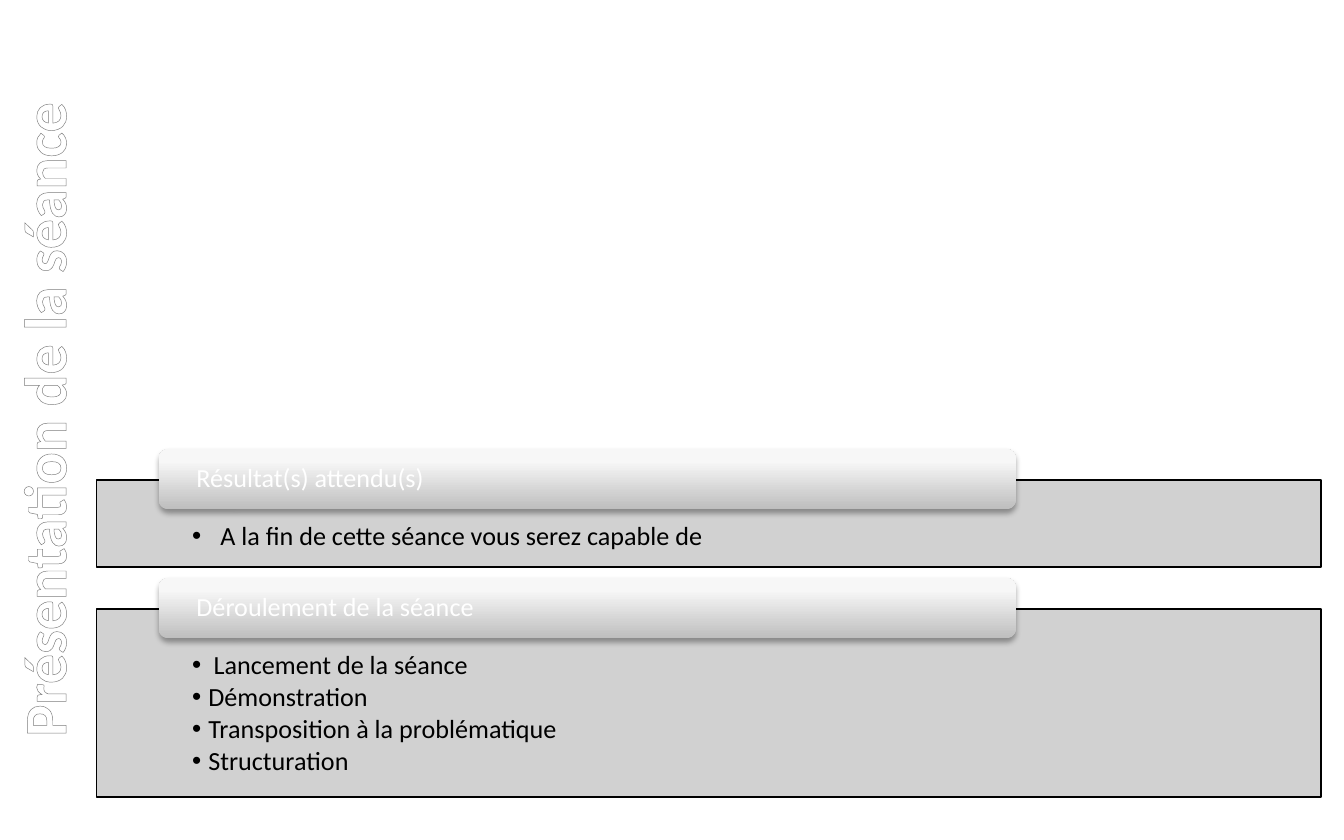
from pptx import Presentation
from pptx.dml.color import RGBColor
from pptx.enum.shapes import MSO_SHAPE as Shape
from pptx.enum.text import MSO_ANCHOR as Anchor, MSO_AUTO_SIZE as AutoSize, PP_ALIGN as Align
from pptx.oxml import parse_xml
from pptx.oxml.ns import nsdecls, qn
from pptx.util import Pt

PX = 9144  # EMU per px, 100 px to the inch
WIDTH, HEIGHT = 1000, 625
TWO_CONTENT = 3
FONT = "Calibri"
HEADER_STOPS = [(0, "BEBEBE"), (80, "F7F7F7"), (100, "F8F8F8")]
TITLE_STOPS = [(0, "FFFFFF"), (9, "FFFFFF"), (50, "7F7F7F"), (79, "FFFFFF"), (100, "FFFFFF")]

# header, panel top, panel height, list of (text, distance from bullet to text)
SECTIONS = [
    ("Résultat(s) attendu(s)", 357, 65,
     [("A la fin de cette séance vous serez capable de", 21)]),
    ("Déroulement de la séance", 453, 140,
     [("Lancement de la séance", 16), ("Démonstration", 12),
      ("Transposition à la problématique", 12), ("Structuration", 12)]),
]


def px(value):
    return value * PX


def color(value):
    return RGBColor.from_string(value)


def element(xml):
    """Parse one DrawingML element written without its namespace declaration."""
    head, rest = xml.split(">", 1)
    slash = "/" if head.endswith("/") else ""
    return parse_xml(f"{head.rstrip('/')} {nsdecls('a')}{slash}>{rest}")


def place(shape, left, top, width, height):
    shape.left, shape.top = px(left), px(top)
    shape.width, shape.height = px(width), px(height)


def set_gradient(parent, fill, stops, angle):
    fill.solid()
    fill.fore_color.rgb = color(stops[0][1])
    marks = "".join(f'<a:gs pos="{position * 1000}"><a:srgbClr val="{value}"/></a:gs>'
                    for position, value in stops)
    gradient = element(f'<a:gradFill rotWithShape="1"><a:gsLst>{marks}</a:gsLst>'
                       f'<a:lin ang="{angle * 60000}" scaled="0"/></a:gradFill>')
    parent.replace(parent.find(qn("a:solidFill")), gradient)


def set_frame(frame, anchor, left, top, right, bottom):
    frame.word_wrap = True
    frame.auto_size = AutoSize.NONE
    frame.vertical_anchor = anchor
    frame.margin_left, frame.margin_top = px(left), px(top)
    frame.margin_right, frame.margin_bottom = px(right), px(bottom)


def add_text(paragraph, text, size, value):
    run = paragraph.add_run()
    run.text = text
    run.font.name, run.font.size = FONT, Pt(size)
    run.font.color.rgb = color(value)
    return run


def build_title(title, left, top, width, height):
    """Fill the upright box with the title, reading from bottom to top."""
    place(title, left + (width - height) // 2, top + (height - width) // 2, height, width)
    title.rotation = 270
    set_frame(title.text_frame, Anchor.MIDDLE, 10, 5, 10, 5)
    paragraph = title.text_frame.paragraphs[0]
    paragraph.alignment = Align.CENTER
    run = add_text(paragraph, "Présentation de la séance", 32, "FFFFFF")
    run.font.bold = True
    properties = run.font._element if hasattr(run.font, "_element") else run._r.get_or_add_rPr()
    set_gradient(properties, run.font.fill, TITLE_STOPS, 90)
    properties.insert(0, element(
        f'<a:ln w="{Pt(0.83)}"><a:solidFill><a:srgbClr val="7D7D7D"/></a:solidFill></a:ln>'))


def build_panel(panel, items, left, top, width, height):
    place(panel, left, top, width, height)
    panel.fill.solid()
    panel.fill.fore_color.rgb = color("CCCCCC")
    panel._element.spPr.find(qn("a:solidFill"))[0].append(element('<a:alpha val="90000"/>'))
    panel.line.color.rgb = color("000000")
    panel.line.width = Pt(0.75)
    frame = panel.text_frame
    set_frame(frame, Anchor.TOP, 71, 32, 71, 11)
    for index, (text, indent) in enumerate(items):
        paragraph = frame.add_paragraph() if index else frame.paragraphs[0]
        paragraph.level = 1
        paragraph.alignment = Align.LEFT
        paragraph.line_spacing = 0.9
        paragraph.space_before, paragraph.space_after = Pt(0), Pt(2.1)
        properties = paragraph._p.get_or_add_pPr()
        properties.set("marL", str(px(indent)))
        properties.set("indent", str(px(-indent)))
        properties.append(element('<a:buFont typeface="Arial"/>'))
        properties.append(element('<a:buChar char="•"/>'))
        add_text(paragraph, text, 14, "000000")


def build_header(slide, text, left, top, width, height):
    header = slide.shapes.add_shape(
        Shape.ROUNDED_RECTANGLE, px(left), px(top), px(width), px(height))
    header.line.fill.background()
    header.shadow.inherit = False
    properties = header._element.spPr
    set_gradient(properties, header.fill, HEADER_STOPS, 270)
    properties.find(qn("a:effectLst")).append(element(
        f'<a:outerShdw blurRad="{Pt(3.1)}" dist="{Pt(1.8)}" dir="5400000" rotWithShape="0">'
        '<a:srgbClr val="000000"><a:alpha val="35000"/></a:srgbClr></a:outerShdw>'))
    set_frame(header.text_frame, Anchor.MIDDLE, 26, 2, 26, 2)
    paragraph = header.text_frame.paragraphs[0]
    paragraph.alignment = Align.LEFT
    paragraph.line_spacing = 0.9
    add_text(paragraph, text, 14, "FFFFFF")


def build_section(slide, panel, section, left, width):
    header, top, height, items = section
    build_panel(panel, items, left, top, width, height)
    build_header(slide, header, left + 46, top - 23, 638, 45)


def main():
    presentation = Presentation()
    presentation.slide_width, presentation.slide_height = px(WIDTH), px(HEIGHT)
    slide = presentation.slides.add_slide(presentation.slide_layouts[TWO_CONTENT])
    title, *panels = list(slide.placeholders)[:3]
    build_title(title, 0, 0, 64, HEIGHT)
    for panel, section in zip(panels, SECTIONS):
        build_section(slide, panel, section, 72, 911)
    # The comparison layout carries more boxes than the two panels use.
    for spare in list(slide.placeholders)[3:]:
        spare._element.getparent().remove(spare._element)
    presentation.save("out.pptx")


if __name__ == "__main__":
    main()
